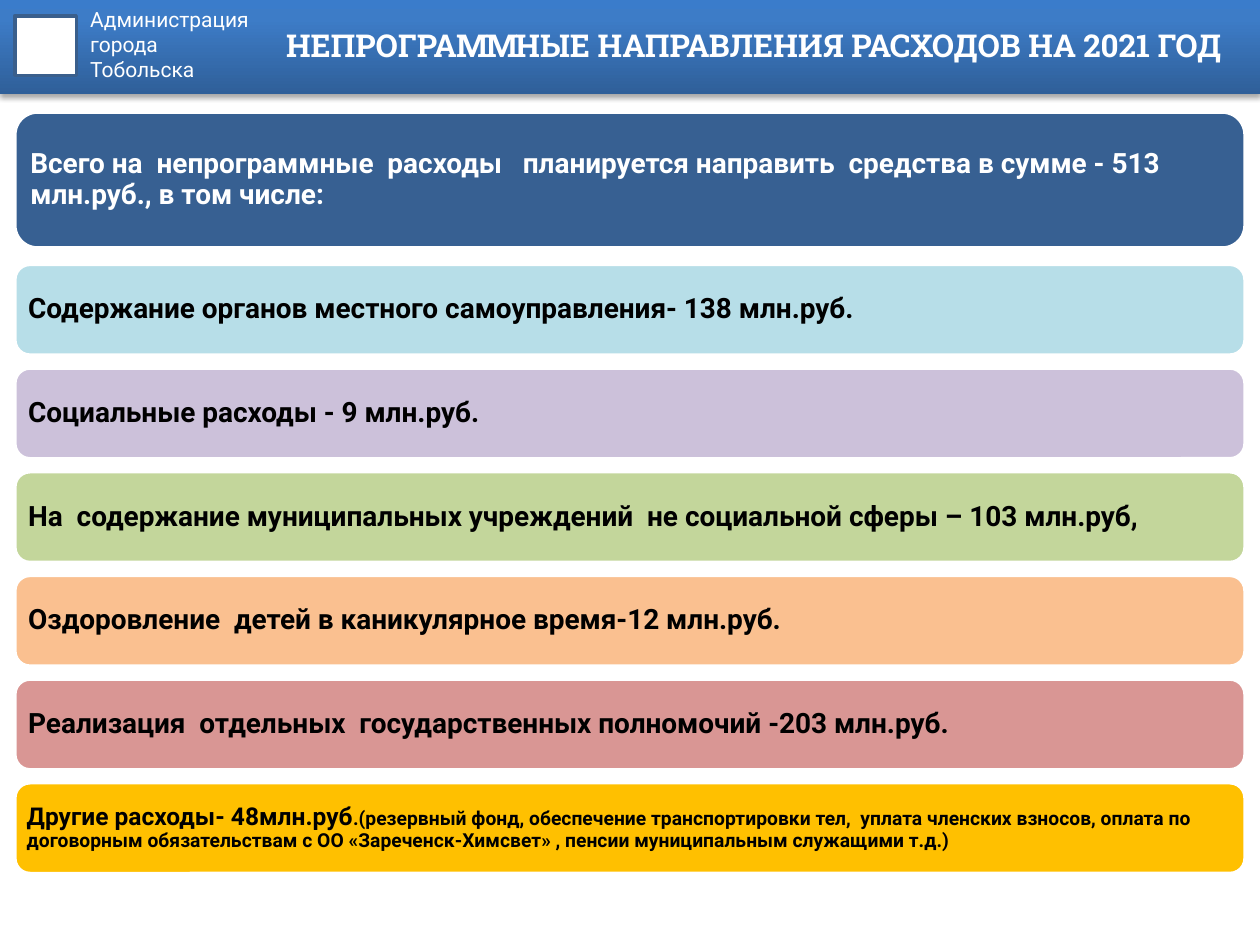
import copy

import lxml.etree
import pptx
import pptx.dml.color
import pptx.enum.shapes
import pptx.enum.text
import pptx.oxml.ns
import pptx.util

Cm, Pt = pptx.util.Cm, pptx.util.Pt
qn = pptx.oxml.ns.qn
SHAPE = pptx.enum.shapes.MSO_SHAPE
ANCHOR = pptx.enum.text.MSO_ANCHOR
ALIGN = pptx.enum.text.PP_ALIGN

TOTAL = ("Всего на  непрограммные  расходы   планируется направить  "
         "средства в сумме - 513 млн.руб., в том числе:")
EXPENSES = [
    ("B7DEE8", "Содержание органов местного самоуправления- 138 млн.руб."),
    ("CCC1DA", "Социальные расходы - 9 млн.руб."),
    ("C3D69B", "На  содержание муниципальных учреждений  не социальной сферы – 103 млн.руб,"),
    ("FAC090", "Оздоровление  детей в каникулярное время-12 млн.руб."),
    ("D99694", "Реализация  отдельных  государственных полномочий -203 млн.руб."),
]
OTHER = "Другие расходы- 48млн.руб"
OTHER_DETAILS = (".(резервный фонд, обеспечение транспортировки тел,  уплата членских взносов, "
                 "оплата по договорным обязательствам с ОО «Зареченск-Химсвет» , "
                 "пенсии муниципальным служащими т.д.)")


def colour(value):
    return pptx.dml.color.RGBColor.from_string(value)


class BudgetSlide:
    body_font = "Roboto"
    title_font = "Roboto Slab"

    def __init__(self, slide):
        self.slide = slide

    def shape(self, kind, left, top, width, height, fill=None, line=None):
        item = self.slide.shapes.add_shape(kind, Cm(left), Cm(top), Cm(width), Cm(height))
        item.shadow.inherit = False
        if fill:
            item.fill.solid()
            item.fill.fore_color.rgb = colour(fill)
        if line:
            item.line.color.rgb = colour(line)
            item.line.width = Pt(2)
        else:
            item.line.fill.background()
        return item

    def header_band(self, width, height, stops):
        """Draw the top band with an upward gradient and a soft shadow below it."""
        band = self.shape(SHAPE.RECTANGLE, 0, 0, width, height)
        band.fill.gradient()
        band.fill.gradient_angle = 90
        stop_list = band._element.spPr.find(".//" + qn("a:gsLst"))
        stop_list.append(copy.deepcopy(stop_list[-1]))
        for stop, (position, value) in zip(band.fill.gradient_stops, stops):
            stop.position = position
            stop.color.rgb = colour(value)
        effects = band._element.spPr.find(qn("a:effectLst"))
        shadow = lxml.etree.SubElement(
            effects, qn("a:outerShdw"), blurRad=str(Pt(3.1)), dist=str(Pt(1.8)),
            dir="5400000", rotWithShape="0")
        black = lxml.etree.SubElement(shadow, qn("a:srgbClr"), val="000000")
        lxml.etree.SubElement(black, qn("a:alpha"), val="35000")

    def fill_frame(self, frame, paragraphs, value, anchor=ANCHOR.TOP, margin=None,
                   font=body_font, bold=True, **paragraph_format):
        """Set the text of a frame; each paragraph is a list of (text, size) runs."""
        frame.word_wrap = True
        frame.vertical_anchor = anchor
        if margin is not None:
            for side in ("left", "top", "right", "bottom"):
                setattr(frame, f"margin_{side}", Cm(margin))
        for index, runs in enumerate(paragraphs):
            paragraph = frame.add_paragraph() if index else frame.paragraphs[0]
            for name, setting in {"alignment": ALIGN.LEFT, **paragraph_format}.items():
                setattr(paragraph, name, setting)
            for text, size in runs:
                run = paragraph.add_run()
                run.text = text
                for name, setting in {"name": font, "size": Pt(size), "bold": bold}.items():
                    setattr(run.font, name, setting)
                run.font.color.rgb = colour(value)

    def text(self, left, top, width, height, paragraphs, **style):
        box = self.slide.shapes.add_textbox(Cm(left), Cm(top), Cm(width), Cm(height))
        self.fill_frame(box.text_frame, paragraphs, "FFFFFF", **style)

    def panel(self, top, height, fill, runs, value="000000", margin=0.18):
        """Draw a full-width rounded panel holding one paragraph."""
        item = self.shape(SHAPE.ROUNDED_RECTANGLE, 0.3, top, 24.8, height, fill, "FFFFFF")
        self.fill_frame(item.text_frame, [runs], value, ANCHOR.MIDDLE, margin, line_spacing=0.9)


def main():
    deck = pptx.Presentation()
    deck.slide_width, deck.slide_height = Cm(25.4), Cm(19.05)
    page = BudgetSlide(deck.slides.add_slide(deck.slide_layouts[6]))

    page.header_band(25.4, 1.9, [(0, "2F5F99"), (0.8, "3D7CC7"), (1, "3A7CCB")])
    page.shape(SHAPE.RECTANGLE, 0.3, 0.32, 1.24, 1.2, "FFFFFF", "3A5F8C")
    page.text(1.57, 0, 5.94, 2.3,
              [[(word, 12)] for word in ("Администрация", "города", "Тобольска")], bold=False)
    page.text(5, 0, 20.4, 1.8, [[("НЕПРОГРАММНЫЕ НАПРАВЛЕНИЯ РАСХОДОВ НА 2021 ГОД", 18)]],
              anchor=ANCHOR.MIDDLE, font=page.title_font, alignment=ALIGN.CENTER)

    page.panel(2.26, 2.74, "376092", [(TOTAL, 16)], "FFFFFF")
    first_top, pitch, height = 5.33, 2.09, 1.83
    for index, (fill, expense) in enumerate(EXPENSES):
        page.panel(first_top + index * pitch, height, fill, [(expense, 16)])
    page.panel(first_top + len(EXPENSES) * pitch, height, "FFC000",
               [(OTHER, 14), (OTHER_DETAILS, 11)], margin=0.15)

    deck.save("out.pptx")


if __name__ == "__main__":
    main()
